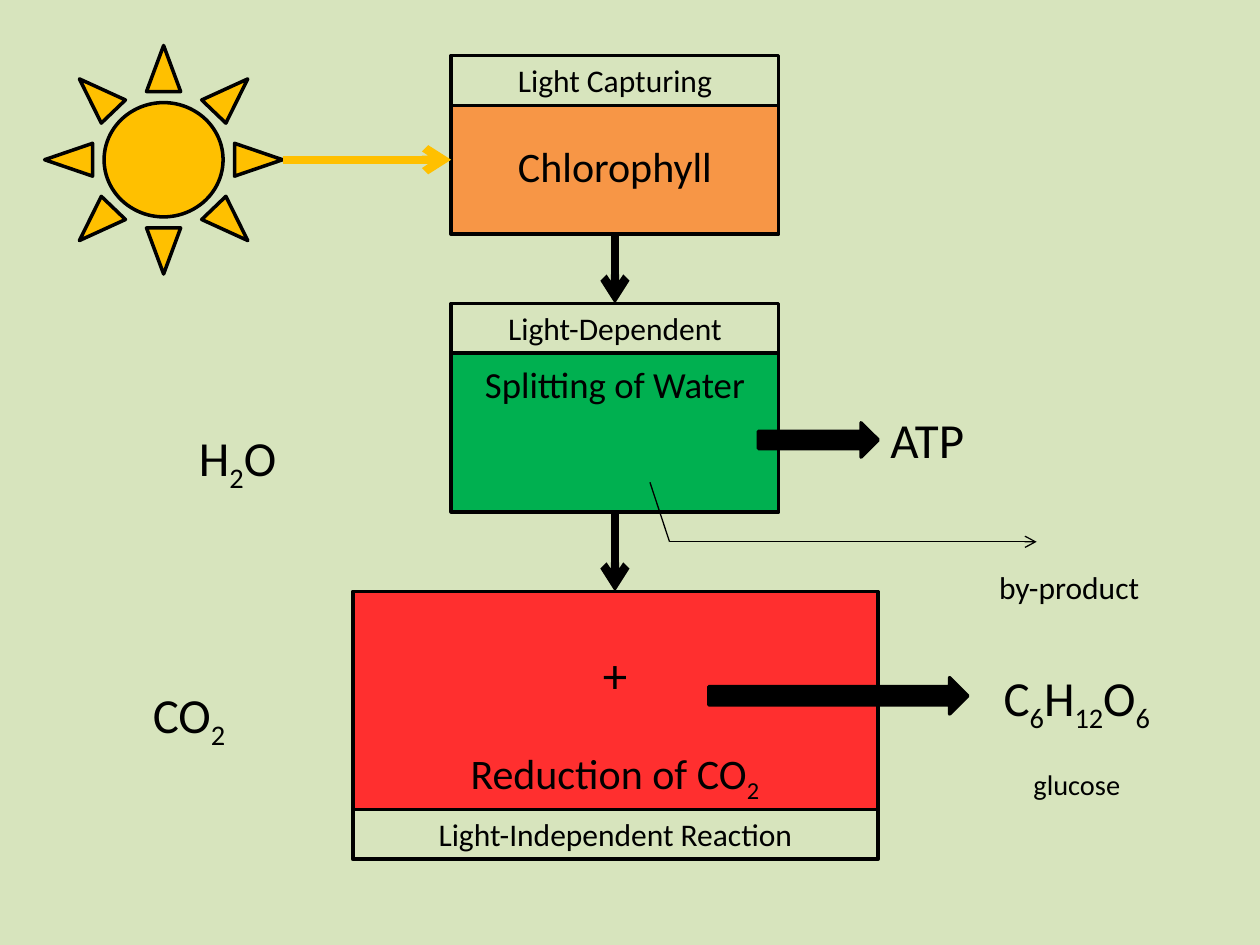
"""Build a slide that charts the stages of photosynthesis."""
from lxml import etree
from pptx import Presentation, util as u
from pptx.dml.color import RGBColor
from pptx.enum import shapes, text
from pptx.oxml.ns import qn

Pt = u.Pt
SHAPE = shapes.MSO_SHAPE
BLACK, SUN = "000000", "FFC000"
MID, LEFT, WIDTH = 351.4, 257.8, 187.2
WIDE_LEFT, WIDE = 201.6, 300.2
HEADER = 28.4


def rgb(value):
    """Turn a hex string into a colour."""
    return RGBColor.from_string(value)


class Sketch:
    """Hold the style and the current slide."""

    font = "Calibri"
    outline = 2

    def __init__(self, prs, background):
        """Add a blank slide with a plain background."""
        self.s = prs.slides.add_slide(prs.slide_layouts[6])
        self.s.background.fill.solid()
        self.s.background.fill.fore_color.rgb = rgb(background)

    def shape(self, kind, x, y, w, h, fill=None):
        """Draw an outlined preset shape."""
        sp = self.s.shapes.add_shape(kind, Pt(x), Pt(y), Pt(w), Pt(h))
        sp.shadow.inherit = False
        if fill:
            sp.fill.solid()
            sp.fill.fore_color.rgb = rgb(fill)
        else:
            sp.fill.background()
        sp.line.color.rgb = rgb(BLACK)
        sp.line.width = Pt(self.outline)

    def line(self, start, end, color=BLACK, width=4.75, arrow=True, group=None):
        """Draw a straight line, with an arrowhead at its end if asked."""
        parent = (group or self.s).shapes
        points = [Pt(v) for v in (*start, *end)]
        sp = parent.add_connector(shapes.MSO_CONNECTOR.STRAIGHT, *points)
        sp.line.color.rgb = rgb(color)
        sp.line.width = Pt(width)
        props = sp._element.spPr
        if arrow:
            etree.SubElement(props.find(qn("a:ln")), qn("a:tailEnd"), type="arrow")
        etree.SubElement(props, qn("a:effectLst"))

    def label(self, lines, x, y, w, h, size, align="CENTER"):
        """Write lines of text in which every second part between bars is a subscript."""
        sp = self.s.shapes.add_textbox(Pt(x), Pt(y), Pt(w), Pt(h))
        tf = sp.text_frame
        tf.word_wrap = True
        tf.auto_size = text.MSO_AUTO_SIZE.SHAPE_TO_FIT_TEXT
        for i, content in enumerate(lines.split("\n")):
            p = tf.paragraphs[0] if i == 0 else tf.add_paragraph()
            p.alignment = text.PP_ALIGN[align]
            for j, part in enumerate(content.split("|")):
                if part:
                    self.run(p, part, size, j % 2 == 1)

    def run(self, p, content, size, subscript):
        """Add one formatted run to a paragraph."""
        r = p.add_run()
        r.text = content
        r.font.name = self.font
        r.font.size = Pt(size)
        r.font.color.rgb = rgb(BLACK)
        if subscript:
            r.font._element.set("baseline", "-25000")


def main():
    """Draw the process from sunlight to glucose."""
    prs = Presentation()
    prs.slide_width, prs.slide_height = Pt(720), Pt(540)
    k = Sketch(prs, "D7E4BD")

    k.shape(SHAPE.RECTANGLE, WIDE_LEFT, 338, WIDE, 124.6, "FF2F2F")
    k.shape(SHAPE.RECTANGLE, LEFT, 202, WIDTH, 90.6, "00B050")
    k.shape(SHAPE.SUN, 25.5, 26, 136, 130.6, SUN)
    k.shape(SHAPE.RECTANGLE, LEFT, 60.3, WIDTH, 73.5, "F79646")

    for x, y, w, name in (
        (LEFT, 31.8, WIDTH, "Light Capturing"),
        (LEFT, 173.5, WIDTH, "Light-Dependent"),
        (WIDE_LEFT, 462.6, WIDE, "Light-Independent Reaction"),
    ):
        k.shape(SHAPE.RECTANGLE, x, y, w, HEADER)
        k.label(name, x, y - 0.3, w, 29, 18)

    k.line((161.5, 91.3), (LEFT, 91.3), SUN)
    for top, bottom in ((133.8, 173.5), (292.6, 338)):
        k.line((MID, top), (MID, bottom))

    group = k.s.shapes.add_group_shape()
    corner = (382.6, 309.6)
    k.line(corner, (592.4, 309.6), width=0.75, group=group)
    k.line(corner, (371.4, 275.6), width=0.75, arrow=False, group=group)

    k.shape(SHAPE.RIGHT_ARROW, 405, 387.2, 148, 20.8, BLACK)
    k.shape(SHAPE.RIGHT_ARROW, 433.3, 241.6, 68.5, 19.6, BLACK)

    for name, x, y, w, h, size in (
        ("Chlorophyll", 269.3, 77, 164.2, 36, 24),
        ("Splitting of Water", 269.3, 203, 164.2, 32.4, 21),
        ("H|2|O", 70.6, 240.5, 130.3, 41, 28),
        ("CO|2", 59.8, 387.4, 96.5, 41, 28),
        ("Reduction of CO|2", 223.9, 423.4, 254.9, 36, 24),
        ("C|6|H|12|O|6\n|glucose", 553, 378, 124.6, 64, 28),
    ):
        k.label(name, x, y, w, h, size)
    for name, x, y, w, h, size in (
        ("by-product", 563.8, 321.1, 102.2, 29, 18),
        ("+", 337.4, 365, 28.2, 41, 28),
        ("ATP", 501.8, 230.4, 113, 41, 28),
    ):
        k.label(name, x, y, w, h, size, "LEFT")

    prs.save("out.pptx")


if __name__ == "__main__":
    main()
